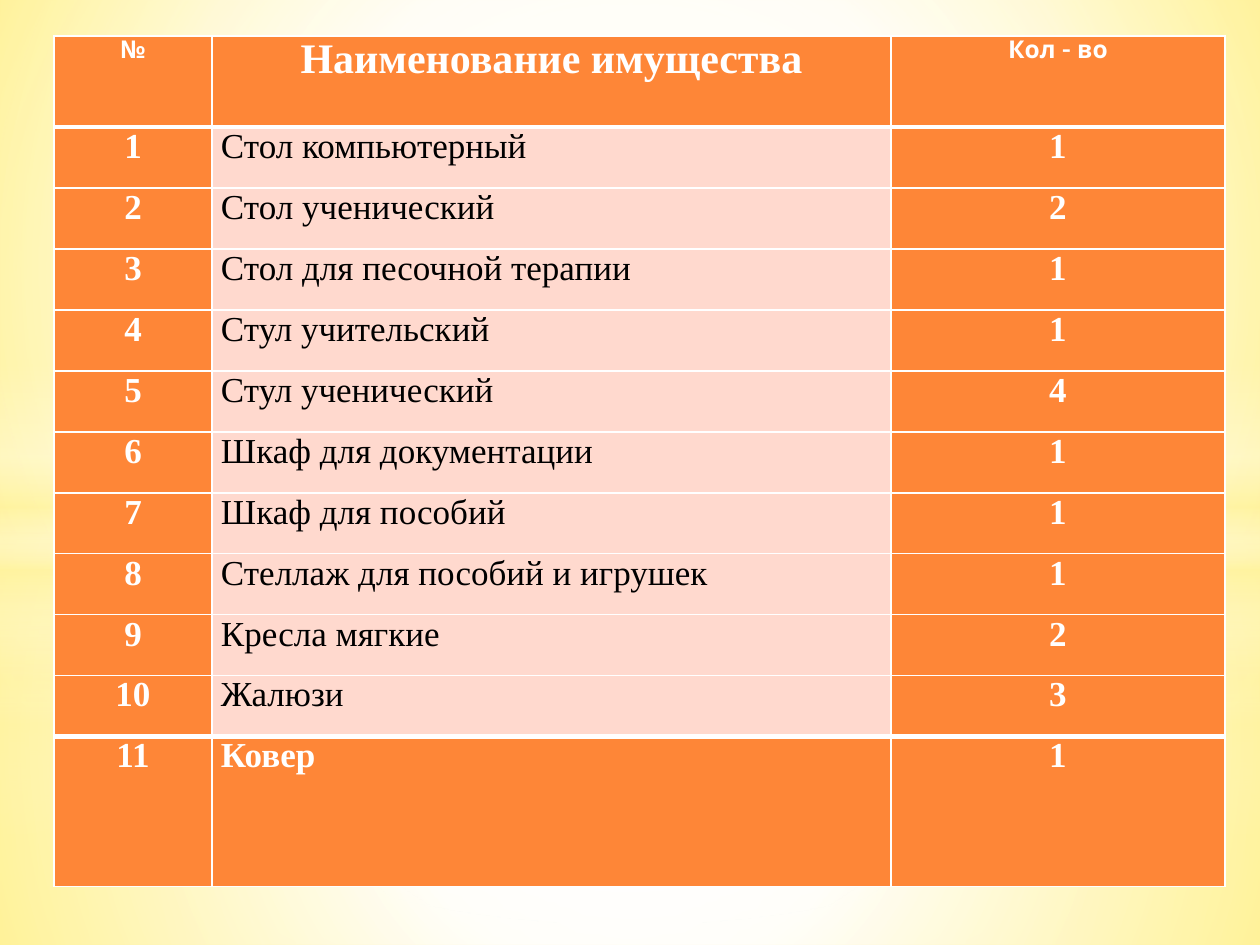
from lxml.etree import SubElement
from pptx import Presentation
from pptx.dml.color import RGBColor
from pptx.enum.shapes import MSO_SHAPE as SHAPE
from pptx.enum.text import PP_ALIGN as ALIGN
from pptx.oxml.ns import qn
from pptx.util import Emu, Pt

WIDTH, HEIGHT = 1260, 945
ORANGE, PINK, WHITE, BLACK, CREAM = "FE8637", "FFD9CE", "FFFFFF", "000000", "FFF39D"
SERIF, SANS = "Times New Roman", "Karla"
CENTER = (50, 50, 50, 50)

COLUMNS = (158, 679, 334)
HEADER_HEIGHT, ITEM_HEIGHT, LAST_HEIGHT = 91, 61, 150
HEADINGS = (("№", SANS, 14), ("Наименование имущества", SERIF, 24), ("Кол - во", SANS, 14))
ITEMS = (
    ("Стол компьютерный", 1),
    ("Стол ученический", 2),
    ("Стол для песочной терапии", 1),
    ("Стул учительский", 1),
    ("Стул ученический", 4),
    ("Шкаф для документации", 1),
    ("Шкаф для пособий", 1),
    ("Стеллаж для пособий и игрушек", 1),
    ("Кресла мягкие", 2),
    ("Жалюзи", 3),
    ("Ковер", 1),
)


def px(n):
    return Emu(round(n * 914400 / 126))


def rgb(value):
    return RGBColor.from_string(value)


def set_gradient(fill, element, stops, focus=None):
    """Stops are (position %, colour, opacity %); focus makes it circular, else vertical."""
    fill.gradient()
    gradient = element.xpath(".//a:gradFill")[0]
    gradient.clear()
    gradient.set("rotWithShape", "1")
    stop_list = SubElement(gradient, qn("a:gsLst"))
    for position, color, opacity in stops:
        stop = SubElement(stop_list, qn("a:gs"), pos=str(position * 1000))
        tint = SubElement(stop, qn("a:srgbClr"), val=color)
        if opacity < 100:
            SubElement(tint, qn("a:alpha"), val=str(opacity * 1000))
    if focus:
        circle = SubElement(gradient, qn("a:path"), path="circle")
        sides = {side: str(n * 1000) for side, n in zip("ltrb", focus)}
        SubElement(circle, qn("a:fillToRect"), **sides)
    else:
        SubElement(gradient, qn("a:lin"), ang="5400000", scaled="0")


def add_glow(slide, kind, top, height, stops, focus=None):
    glow = slide.shapes.add_shape(kind, 0, px(top), px(WIDTH), px(height))
    glow.shadow.inherit = False
    glow.line.fill.background()
    set_gradient(glow.fill, glow.element, stops, focus)


def add_backdrop(slide, split, stripe_top, extra, ellipse_end):
    """Two bands meeting at split, a soft stripe and an ellipse; extra adds opacity."""
    lower = ((0, WHITE, 91 + extra), (37, WHITE, 76 + extra), (100, CREAM, 79 + extra))
    upper = ((0, WHITE, 89 + extra), (48, WHITE, 62 + extra), (100, CREAM, 79 + extra))
    stripe = ((0, WHITE, 0), (29, WHITE, 30), (45, CREAM, 40),
              (55, WHITE, 26), (65, CREAM, 60), (100, WHITE, 0))
    ellipse = ((0, WHITE, 100), (ellipse_end, WHITE, 0))
    add_glow(slide, SHAPE.RECTANGLE, split, HEIGHT - split, lower, CENTER)
    add_glow(slide, SHAPE.RECTANGLE, 0, split, upper, CENTER)
    add_glow(slide, SHAPE.RECTANGLE, stripe_top, 315, stripe)
    add_glow(slide, SHAPE.OVAL, 220, 703, ellipse, CENTER)


def set_borders(cell, top, bottom):
    properties = cell._tc.get_or_add_tcPr()
    for side, width in (("L", 1), ("R", 1), ("T", top), ("B", bottom)):
        line = SubElement(properties, qn(f"a:ln{side}"), w=str(Pt(width)))
        SubElement(SubElement(line, qn("a:solidFill")), qn("a:srgbClr"), val=WHITE)


def fill_cell(cell, text, font_name, size, plain=False, centered=True, top=1, bottom=1):
    set_borders(cell, top, bottom)
    cell.fill.solid()
    cell.fill.fore_color.rgb = rgb(PINK if plain else ORANGE)
    cell.margin_left = cell.margin_right = px(9)
    cell.margin_top = cell.margin_bottom = 0
    cell.text_frame.text = text
    paragraph = cell.text_frame.paragraphs[0]
    paragraph.alignment = ALIGN.CENTER if centered else ALIGN.LEFT
    font = paragraph.runs[0].font
    font.name, font.size, font.bold = font_name, Pt(size), not plain
    font.color.rgb = rgb(BLACK if plain else WHITE)


def add_inventory(slide):
    last = len(ITEMS)
    heights = [HEADER_HEIGHT] + [ITEM_HEIGHT] * (last - 1) + [LAST_HEIGHT]
    table = slide.shapes.add_table(last + 1, len(COLUMNS), px(54), px(36),
                                   px(sum(COLUMNS)), px(sum(heights))).table
    for column, width in zip(table.columns, COLUMNS):
        column.width = px(width)
    for row, height in zip(table.rows, heights):
        row.height = px(height)
    for column, (heading, font_name, size) in enumerate(HEADINGS):
        fill_cell(table.cell(0, column), heading, font_name, size, bottom=3)
    for number, (item, quantity) in enumerate(ITEMS, 1):
        top = 3 if number in (1, last) else 1
        bottom = 3 if number == last - 1 else 1
        for column, text in enumerate((str(number), item, str(quantity))):
            is_name = column == 1
            fill_cell(table.cell(number, column), text, SERIF, 20,
                      plain=is_name and number < last, centered=not is_name,
                      top=top, bottom=bottom)


def main():
    deck = Presentation()
    deck.slide_width, deck.slide_height = px(WIDTH), px(HEIGHT)
    slide = deck.slides.add_slide(deck.slide_layouts[6])
    base = ((0, "FFF18D", 100), (60, WHITE, 100), (100, "FFE94E", 100))
    set_gradient(slide.background.fill, slide.element, base, (20, 10, 20, 60))
    add_backdrop(slide, split=703, stripe_top=519, extra=0, ellipse_end=56)
    add_backdrop(slide, split=533, stripe_top=365, extra=1, ellipse_end=54)
    add_inventory(slide)
    deck.save("out.pptx")


if __name__ == "__main__":
    main()
